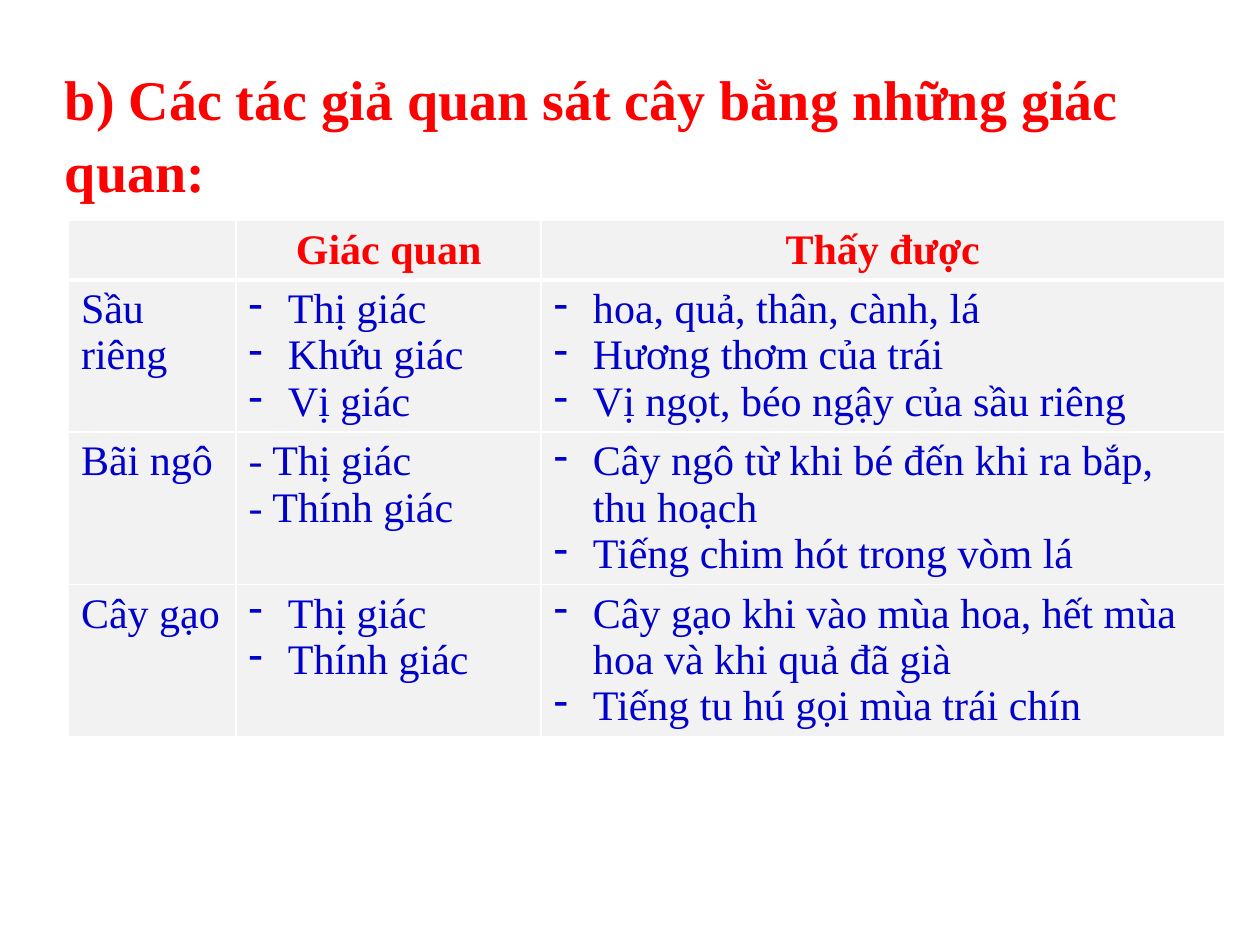
from dataclasses import dataclass

from lxml import etree
from pptx import Presentation
from pptx.dml.color import RGBColor
from pptx.enum.text import MSO_ANCHOR, PP_ALIGN
from pptx.oxml.ns import qn
from pptx.slide import Slide
from pptx.util import Cm, Pt

CENTER = PP_ALIGN.CENTER
MIDDLE = MSO_ANCHOR.MIDDLE
COLORS = {"heading": "FF0000", "body": "0000CC", "cell": "F2F2F2", "border": "FFFFFF"}

TITLE = "b) Các tác giả quan sát cây bằng những giác quan:"
HEADERS = ["", "Giác quan", "Thấy được"]
# Each row: tree, senses, observations; a tuple is a bulleted list.
TREES = [
    ["Sầu riêng",
     ("Thị giác", "Khứu giác", "Vị giác"),
     ("hoa, quả, thân, cành, lá", "Hương thơm của trái",
      "Vị ngọt, béo ngậy của sầu riêng")],
    ["Bãi ngô",
     "- Thị giác\n- Thính giác",
     ("Cây ngô từ khi bé đến khi ra bắp, thu hoạch",
      "Tiếng chim hót trong vòm lá")],
    ["Cây gạo",
     ("Thị giác", "Thính giác"),
     ("Cây gạo khi vào mùa hoa, hết mùa hoa và khi quả đã già",
      "Tiếng tu hú gọi mùa trái chín")],
]
COLUMN_WIDTHS = [3.38, 6.15, 13.77]
ROW_HEIGHTS = [1.17] + [3.07] * len(TREES)


@dataclass
class SlideBuilder:
    page: Slide
    font_name: str = "Times New Roman"
    title_size: int = 32
    table_size: int = 24
    bullet_indent: float = 0.79

    def style(self, para, size, color, bold=False):
        para.font.name = self.font_name
        para.font.size = Pt(size)
        para.font.bold = bold
        para.font.color.rgb = RGBColor.from_string(COLORS[color])

    def bullet(self, para):
        props = para._p.get_or_add_pPr()
        indent = Cm(self.bullet_indent)
        props.set("marL", str(indent))
        props.set("indent", str(-indent))
        etree.SubElement(props, qn("a:buFontTx"))
        etree.SubElement(props, qn("a:buChar"), char="-")

    def borders(self, cell, bottom):
        """Draw the four cell edges; they must come before the fill in the XML."""
        props = cell._tc.get_or_add_tcPr()
        for edge, width in (("lnL", 1), ("lnR", 1), ("lnT", 1), ("lnB", bottom)):
            line = etree.SubElement(props, qn(f"a:{edge}"), w=str(Pt(width)))
            fill = etree.SubElement(line, qn("a:solidFill"))
            etree.SubElement(fill, qn("a:srgbClr"), val=COLORS["border"])

    def title(self, text, left, top, width, height):
        box = self.page.shapes.add_textbox(Cm(left), Cm(top), Cm(width), Cm(height))
        box.text_frame.word_wrap = True
        para = box.text_frame.paragraphs[0]
        para.text = text
        para.line_spacing = 1.08
        self.style(para, self.title_size, "heading", bold=True)

    def cell(self, cell, content, is_header, bottom):
        self.borders(cell, bottom)
        cell.fill.solid()
        cell.fill.fore_color.rgb = RGBColor.from_string(COLORS["cell"])
        is_list = isinstance(content, tuple)
        cell.text = "\n".join(content) if is_list else content
        if is_header:
            cell.vertical_anchor = MIDDLE
        for para in cell.text_frame.paragraphs:
            if is_list:
                self.bullet(para)
            if is_header:
                para.alignment = CENTER
            self.style(para, self.table_size, "heading" if is_header else "body", is_header)

    def table(self, rows, left, top, widths, heights):
        frame = self.page.shapes.add_table(
            len(rows), len(widths), Cm(left), Cm(top), Cm(sum(widths)), Cm(sum(heights)))
        table = frame.table
        for column, width in zip(table.columns, widths):
            column.width = Cm(width)
        for row_index, (row, height) in enumerate(zip(rows, heights)):
            table.rows[row_index].height = Cm(height)
            is_header = row_index == 0
            for column_index, content in enumerate(row):
                self.cell(table.cell(row_index, column_index), content,
                          is_header, bottom=3 if is_header else 1)


def main():
    deck = Presentation()
    deck.slide_width, deck.slide_height = Cm(25.4), Cm(19.05)
    builder = SlideBuilder(deck.slides.add_slide(deck.slide_layouts[6]))
    builder.table([HEADERS] + TREES, 1.38, 4.45, COLUMN_WIDTHS, ROW_HEIGHTS)
    builder.title(TITLE, 1.06, 1.06, 23.28, 3)
    deck.save("out.pptx")


if __name__ == "__main__":
    main()
